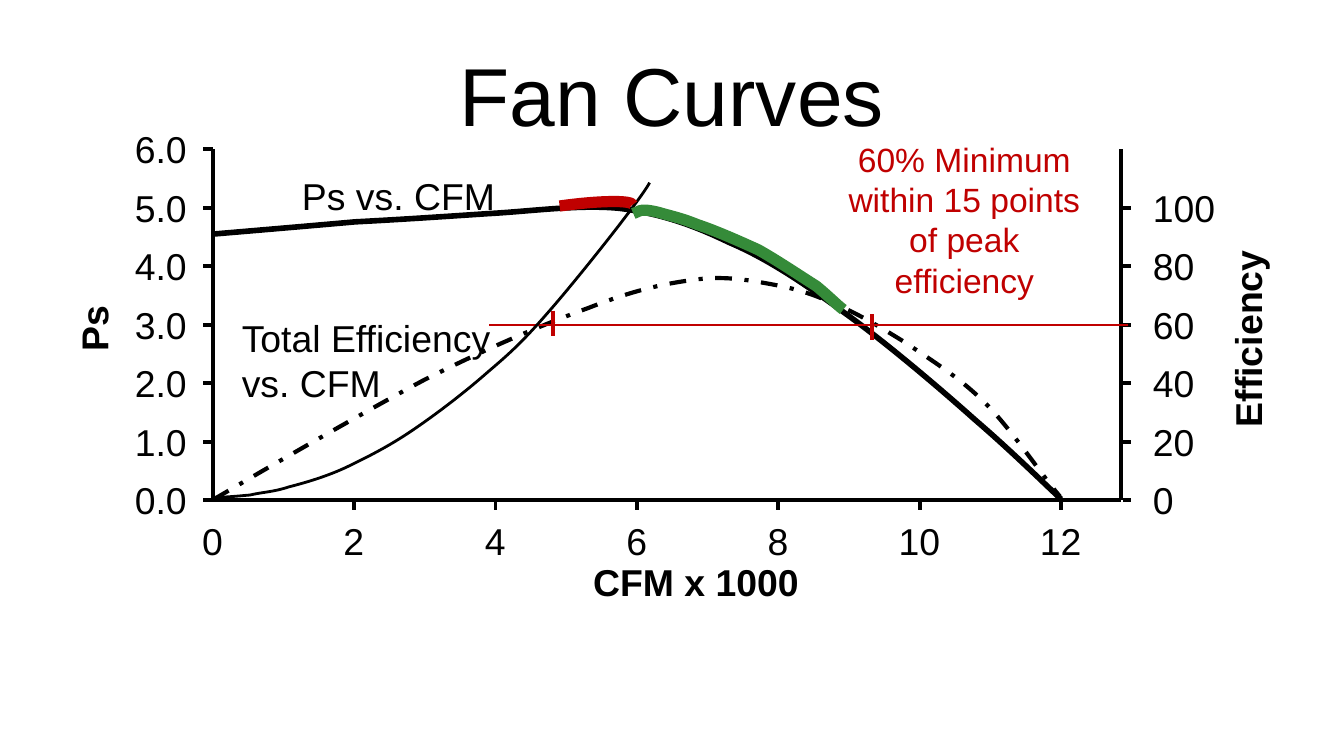
import pptx
import pptx.util
import pptx.dml.color
import pptx.enum.dml
import pptx.enum.shapes
import pptx.enum.text
import pptx.oxml
import pptx.oxml.ns

Cm, Pt = pptx.util.Cm, pptx.util.Pt
qn = pptx.oxml.ns.qn
ALIGN = pptx.enum.text.PP_ALIGN
BLACK, RED, GREEN = "000000", "C00000", "358B39"
CFM_MAX, PS_MAX = 12.85, 6

PRESSURE = [
    (0, 4.55), (0.68, 4.62), (1.37, 4.69), (2.02, 4.76), (2.66, 4.8), (3.27, 4.85),
    (3.9, 4.9), (4.51, 4.94), (5.19, 5.06), (5.76, 4.99), (6.33, 4.9), (6.79, 4.71),
    (7.3, 4.41), (7.83, 4.14), (8.35, 3.72), (8.92, 3.22), (9.51, 2.71), (10.27, 1.93),
    (10.78, 1.38), (11.29, 0.85), (11.75, 0.3), (12, 0.02)]
EFFICIENCY = [
    (0.02, 0.02), (0.51, 0.37), (2.11, 1.49), (2.98, 2.05), (3.88, 2.6), (4.68, 3.01),
    (5.32, 3.29), (5.95, 3.59), (6.37, 3.7), (6.81, 3.77), (7.22, 3.84), (7.55, 3.77),
    (7.87, 3.7), (8.19, 3.63), (8.42, 3.56), (8.75, 3.38), (9.09, 3.22), (9.47, 2.94),
    (9.83, 2.67), (10.19, 2.37), (10.55, 2.11), (10.91, 1.68), (11.27, 1.26),
    (11.75, 0.39), (11.98, 0.07)]
SYSTEM = [
    (0, 0.05), (0.17, 0.05), (0.34, 0.07), (0.53, 0.09), (0.7, 0.14), (0.86, 0.14),
    (1.08, 0.23), (1.31, 0.3), (1.62, 0.41), (1.9, 0.57), (2.19, 0.74), (2.49, 0.92),
    (2.83, 1.2), (3.16, 1.47), (3.56, 1.84), (3.88, 2.18), (4.2, 2.51), (4.37, 2.69),
    (4.75, 3.22), (5.15, 3.77), (6.06, 5.15), (6.18, 5.43)]
GOOD_RANGE = [
    (5.95, 4.9), (6.03, 4.92), (6.01, 5.01), (6.31, 4.92), (6.44, 4.87), (6.62, 4.83),
    (6.86, 4.71), (7.09, 4.62), (7.43, 4.44), (7.72, 4.28), (8, 4.09), (8.33, 3.82),
    (8.54, 3.66), (8.73, 3.47), (8.84, 3.33), (8.92, 3.26)]


def rgb(color):
    return pptx.dml.color.RGBColor.from_string(color)


def style_line(sp, color, width, dash=None):
    sp.line.color.rgb = rgb(color)
    sp.line.width = Pt(width)
    if dash:
        sp.line.dash_style = dash


def add_text(s, box, text, size=20, color=BLACK, bold=False, align=ALIGN.LEFT,
             wrap=False, inset=(0, 0), rotation=0):
    sp = s.shapes.add_textbox(*map(Cm, box))
    sp.rotation = rotation
    tf = sp.text_frame
    tf.word_wrap = wrap
    tf.margin_left = tf.margin_right = Cm(inset[0])
    tf.margin_top = tf.margin_bottom = Cm(inset[1])
    p = tf.paragraphs[0]
    p.text = text
    p.alignment = align
    p.font.name, p.font.size, p.font.bold = "Arial", Pt(size), bold
    p.font.color.rgb = rgb(color)
    return tf


def add_line(s, start, end, color=BLACK, width=0):
    sp = s.shapes.add_connector(pptx.enum.shapes.MSO_CONNECTOR.STRAIGHT,
                                *map(Cm, (*start, *end)))
    style_line(sp, color, width)
    sp._element.spPr.append(pptx.oxml.parse_xml(
        '<a:effectLst xmlns:a="http://schemas.openxmlformats.org/drawingml/2006/main"/>'))


def add_curve(s, box, points, color, width, dash=None):
    spots = [tuple(map(Cm, locate(box, *point))) for point in points]
    builder = s.shapes.build_freeform(*spots[0])
    builder.add_line_segments(spots[1:], close=False)
    sp = builder.convert_to_shape()
    segments = list(sp._element.iter(qn("a:lnTo")))
    for i in range(0, len(segments), 3):
        first, *others = segments[i:i + 3]
        first.tag = qn("a:cubicBezTo")
        for segment in others:
            first.append(segment[0])
            segment.getparent().remove(segment)
    sp.fill.background()
    sp.shadow.inherit = False
    style_line(sp, color, width, dash)


def locate(box, cfm, ps):
    left, top, width, height = box
    return left + width * cfm / CFM_MAX, top + height * (1 - ps / PS_MAX)


def add_title(s, box):
    tf = add_text(s, box, "Fan Curves", 44, align=ALIGN.CENTER, wrap=True,
                  inset=(0.25, 0.13))
    tf.vertical_anchor = pptx.enum.text.MSO_ANCHOR.MIDDLE


def add_axes(s, box):
    left, top, width, height = box
    right, bottom = left + width, top + height
    for start, end in [((left, top), (left, bottom)), ((left, bottom), (right, bottom)),
                       ((right, top), (right, bottom))]:
        add_line(s, start, end, width=2.25)
    for ps in range(PS_MAX + 1):
        y = locate(box, 0, ps)[1]
        add_line(s, (left - 0.18, y), (left, y))
        add_text(s, (left - 1.47, y - 0.43, 0.99, 0.86), f"{ps}.0")
        if ps < PS_MAX:
            add_line(s, (right + 0.03, y), (right + 0.18, y))
            label = str(ps * 20)
            add_text(s, (right + 0.6, y - 0.43, 0.4 * len(label), 0.86), label)
    for cfm in range(0, 13, 2):
        x = locate(box, cfm, 0)[0]
        label = str(cfm)
        label_width = 0.4 * len(label)
        if cfm:
            add_line(s, (x, bottom + 0.18), (x, bottom))
        add_text(s, (x - label_width / 2, bottom + 0.33, label_width, 0.86), label)
    add_text(s, (left + 7.19, bottom + 1.12, 3.96, 0.86), "CFM x 1000", bold=True)
    add_text(s, (left - 2.69, top + 2.95, 0.89, 0.86), "Ps", bold=True, rotation=270)
    add_text(s, (right + 0.69, top + 3.12, 3.4, 0.86), "Efficiency", bold=True,
             rotation=270)


def add_curves(s, box):
    left, top, width, height = box
    add_curve(s, box, PRESSURE, BLACK, 3)
    add_curve(s, box, EFFICIENCY, BLACK, 2.25, pptx.enum.dml.MSO_LINE.DASH_DOT)
    y = locate(box, 0, 3)[1]
    add_line(s, (left + width + 0.13, y), (left + 5.23, y), RED, 1)
    for cfm, offset in [(4.81, -0.27), (9.32, -0.2)]:
        x = locate(box, cfm, 3)[0]
        add_line(s, (x, y + offset), (x, y + offset + 0.48), RED, 2.25)
    add_curve(s, box, SYSTEM, BLACK, 1.5)
    sp = s.shapes.add_shape(pptx.enum.shapes.MSO_SHAPE.ARC, Cm(left + 5.21),
                            Cm(top + 1.07), Cm(2.74), Cm(0.33))
    sp.rotation = 352.2
    sp.fill.background()
    sp.shadow.inherit = False
    style_line(sp, RED, 6)
    add_curve(s, box, GOOD_RANGE, GREEN, 6)


def add_notes_on_plot(s, box):
    left, top = box[:2]
    inset = (0.25, 0.13)
    add_text(s, (left + 0.64, top + 0.33, 4.95, 1.12), "Ps vs. CFM",
             align=ALIGN.RIGHT, wrap=True, inset=inset)
    add_text(s, (left + 0.3, top + 3, 5.28, 1.98), "Total Efficiency vs. CFM",
             wrap=True, inset=inset)
    add_text(s, (left + 11.68, top - 0.33, 5.05, 3.33),
             "60% Minimum within 15 points of peak efficiency", 18, RED,
             align=ALIGN.CENTER, wrap=True, inset=inset)


def main():
    prs = pptx.Presentation()
    prs.slide_width, prs.slide_height = Cm(25.4), Cm(14.28)
    s = prs.slides.add_slide(prs.slide_layouts[6])
    plot = (4.02, 2.82, 17.17, 6.63)
    add_title(s, (1.27, 0.58, 22.86, 2.39))
    add_axes(s, plot)
    add_curves(s, plot)
    add_notes_on_plot(s, plot)
    prs.save("out.pptx")


if __name__ == "__main__":
    main()
